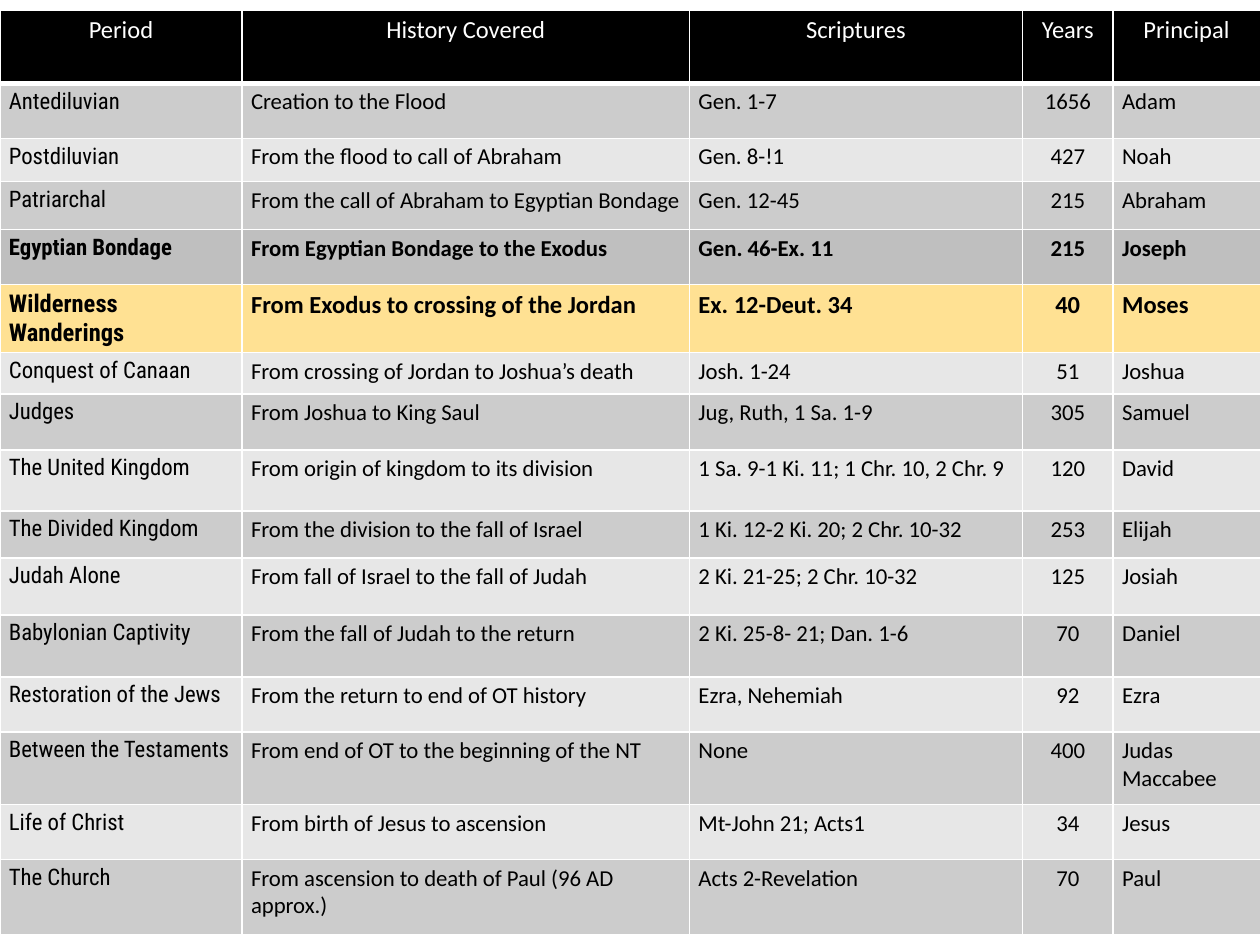
from lxml.etree import SubElement
from pptx import Presentation
from pptx.dml.color import RGBColor
from pptx.enum.text import PP_ALIGN
from pptx.oxml.ns import qn
from pptx.util import Cm, Pt

BLACK = RGBColor(0x00, 0x00, 0x00)
WHITE = RGBColor(0xFF, 0xFF, 0xFF)
DARK_BAND = RGBColor(0xCC, 0xCC, 0xCC)
LIGHT_BAND = RGBColor(0xE7, 0xE7, 0xE7)
BONDAGE_GREY = RGBColor(0xBF, 0xBF, 0xBF)
HIGHLIGHT = RGBColor(0xFF, 0xE1, 0x93)

COLUMN_WIDTHS = [4.88, 9.02, 6.71, 1.83, 3.07]
YEARS_COLUMN = 3
BONDAGE_ROW, WILDERNESS_ROW = 4, 5

# Row height in cm, then the cells of the row
PERIODS = [
    (1.47, "Period", "History Covered", "Scriptures", "Years", "Principal "),
    (1.11, "Antediluvian", "Creation to the Flood", "Gen. 1-7", "1656", "Adam"),
    (0.87, "Postdiluvian", "From the flood to call of Abraham", "Gen. 8-!1", "427", "Noah"),
    (0.97, "Patriarchal", "From the call of Abraham to Egyptian Bondage", "Gen. 12-45",
     "215", "Abraham"),
    (1.11, "Egyptian Bondage", "From Egyptian Bondage to the Exodus", "Gen. 46-Ex. 11",
     "215", "Joseph"),
    (1.35, "Wilderness Wanderings", "From Exodus to crossing of the Jordan",
     "Ex. 12-Deut. 34", "40", "Moses"),
    (0.83, "Conquest of Canaan", "From crossing of Jordan to Joshua’s death", "Josh. 1-24",
     "51", "Joshua"),
    (1.13, "Judges", "From Joshua to King Saul", "Jug, Ruth, 1 Sa. 1-9", "305", "Samuel"),
    (1.23, "The United Kingdom", "From origin of kingdom to its division",
     "1 Sa. 9-1 Ki. 11; 1 Chr. 10, 2 Chr. 9", "120", "David"),
    (0.95, "The Divided Kingdom", "From the division to the fall of Israel",
     "1 Ki. 12-2 Ki. 20; 2 Chr. 10-32", "253", "Elijah"),
    (1.15, "Judah Alone", "From fall of Israel to the fall of Judah",
     "2 Ki. 21-25; 2 Chr. 10-32", "125", "Josiah"),
    (1.25, "Babylonian Captivity", "From the fall of Judah to the return",
     "2 Ki. 25-8- 21; Dan. 1-6", "70", "Daniel"),
    (1.11, "Restoration of the Jews", "From the return to end of OT history",
     "Ezra, Nehemiah", "92", "Ezra"),
    (1.46, "Between the Testaments", "From end of OT to the beginning of the NT", "None",
     "400", "Judas Maccabee"),
    (1.11, "Life of Christ", "From birth of Jesus to ascension", "Mt-John 21; Acts1",
     "34", "Jesus"),
    (1.51, "The Church", "From ascension to death of Paul (96 AD approx.)",
     "Acts 2-Revelation", "70", "Paul"),
]


class PeriodSlide:
    body_font = "Calibri"
    period_font = "Roboto Condensed"

    def __init__(self, presentation):
        self.slide = presentation.slides.add_slide(presentation.slide_layouts[6])

    def add_table(self, rows, column_widths, left, top):
        height = sum(row[0] for row in rows)
        frame = self.slide.shapes.add_table(
            len(rows), len(column_widths), Cm(left), Cm(top),
            Cm(sum(column_widths)), Cm(height))
        table = frame.table
        for column, width in zip(table.columns, column_widths):
            column.width = Cm(width)
        for row_index, (row_height, *texts) in enumerate(rows):
            table.rows[row_index].height = Cm(row_height)
            for column_index, text in enumerate(texts):
                cell = table.cell(row_index, column_index)
                self.add_borders(cell, bottom=3 if row_index == 0 else 1)
                self.format_cell(cell, text, row_index, column_index)

    def add_borders(self, cell, bottom):
        properties = cell._tc.get_or_add_tcPr()
        for side, width in (("L", 1), ("R", 1), ("T", 1), ("B", bottom)):
            line = SubElement(properties, qn(f"a:ln{side}"), w=str(Pt(width)))
            fill = SubElement(line, qn("a:solidFill"))
            SubElement(fill, qn("a:srgbClr"), val=str(WHITE))

    def row_fill(self, row_index):
        special = {0: BLACK, BONDAGE_ROW: BONDAGE_GREY, WILDERNESS_ROW: HIGHLIGHT}
        return special.get(row_index, DARK_BAND if row_index % 2 else LIGHT_BAND)

    def format_cell(self, cell, text, row_index, column_index):
        header = row_index == 0
        cell.fill.solid()
        cell.fill.fore_color.rgb = self.row_fill(row_index)
        cell.margin_left = cell.margin_right = Cm(0.18)
        cell.margin_top = cell.margin_bottom = Cm(0.1)
        cell.text_frame.text = text
        paragraph = cell.text_frame.paragraphs[0]
        centred = header or column_index == YEARS_COLUMN
        paragraph.alignment = PP_ALIGN.CENTER if centred else PP_ALIGN.LEFT
        font = paragraph.runs[0].font
        font.name = self.period_font if column_index == 0 and not header else self.body_font
        font.size = Pt(14 if row_index in (0, WILDERNESS_ROW) else 13)
        font.bold = row_index in (BONDAGE_ROW, WILDERNESS_ROW)
        font.color.rgb = WHITE if header else BLACK


def main():
    presentation = Presentation()
    presentation.slide_width = Cm(25.4)
    presentation.slide_height = Cm(19.05)

    # Table of Bible periods
    period_slide = PeriodSlide(presentation)
    period_slide.add_table(PERIODS, COLUMN_WIDTHS, left=0, top=0.21)

    presentation.save("out.pptx")


if __name__ == "__main__":
    main()
